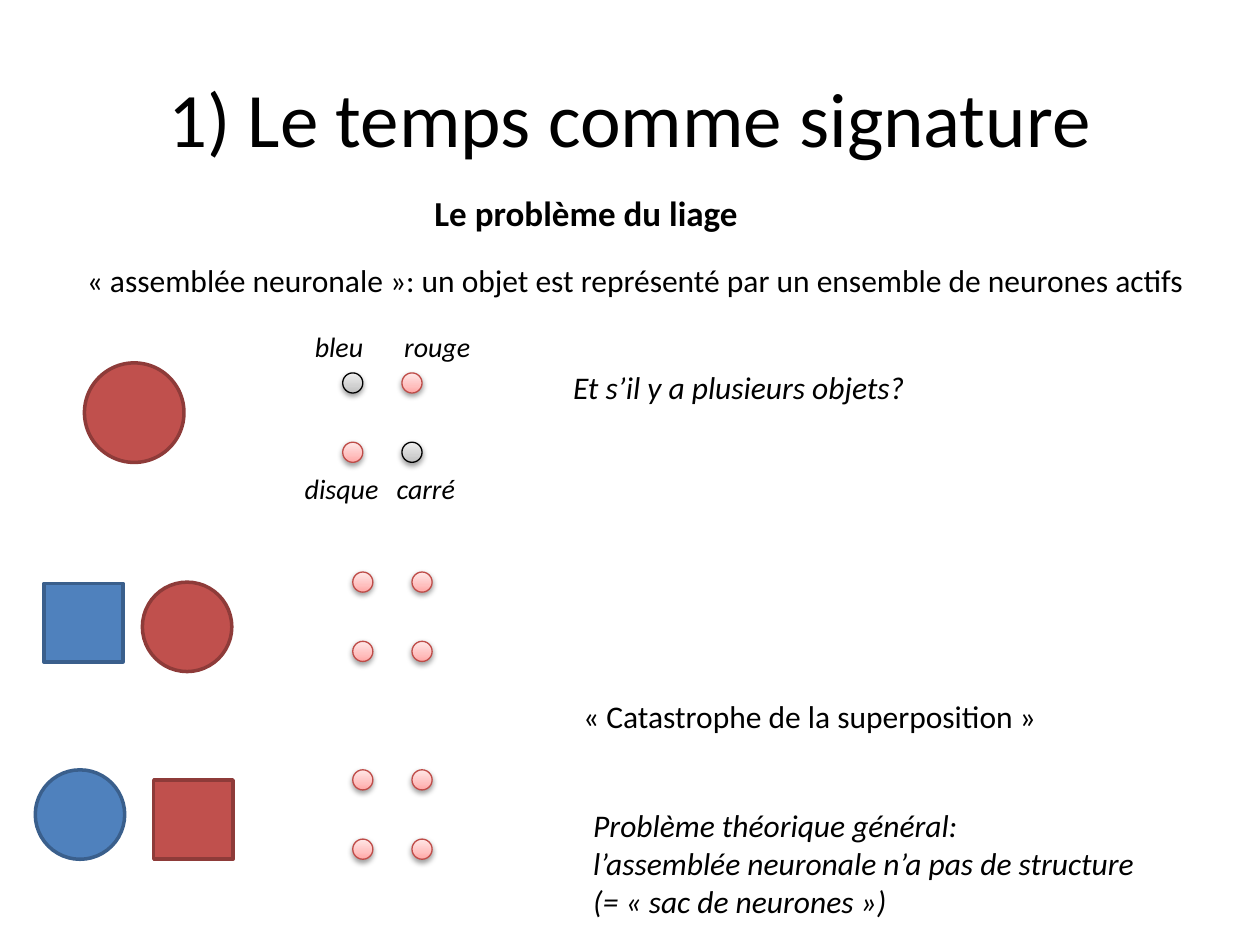
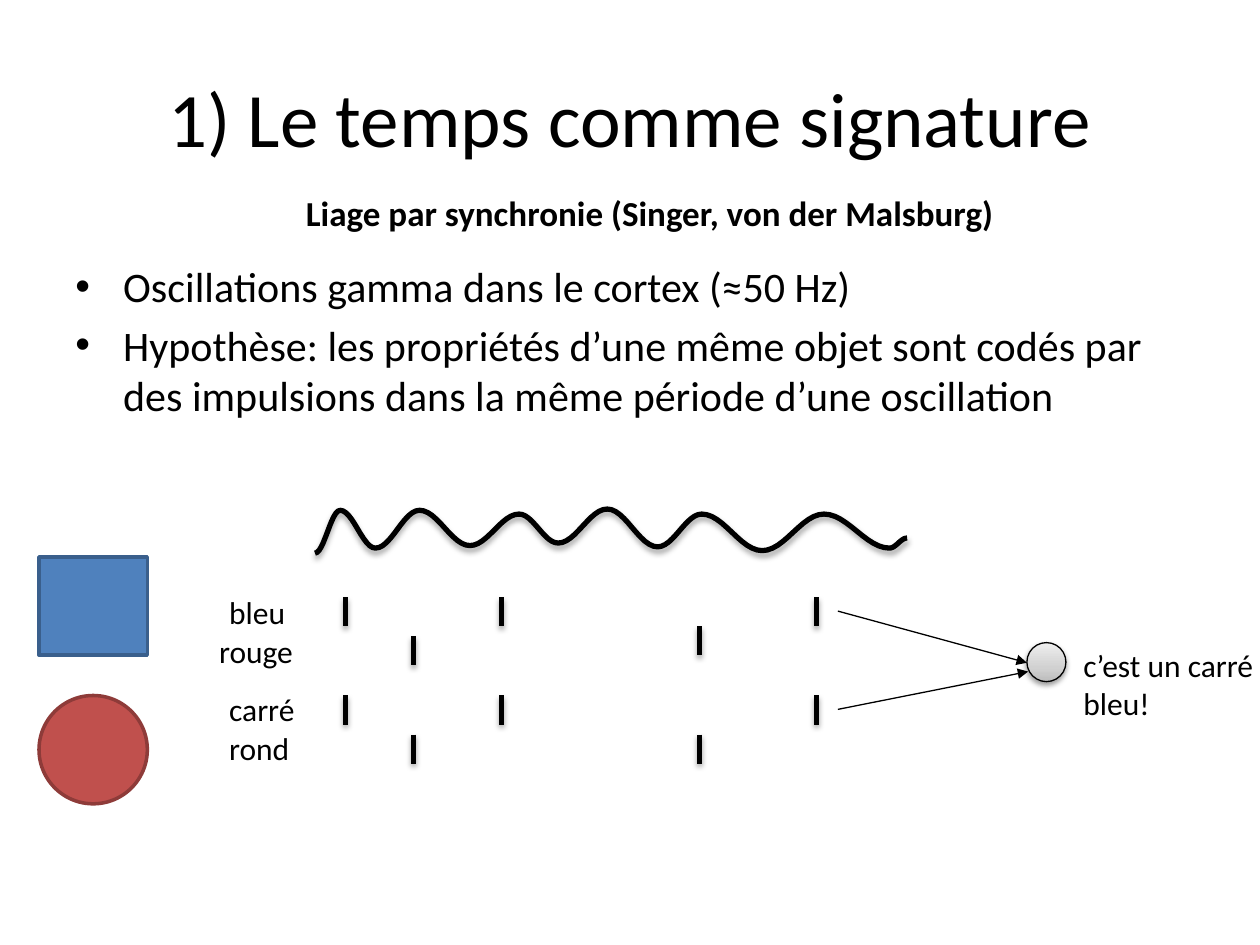
from math import cos, pi
from lxml.etree import SubElement as Sub
from pptx import Presentation
from pptx.dml.color import RGBColor as RGB
from pptx.enum.shapes import MSO_CONNECTOR as LINK, MSO_SHAPE as KIND
from pptx.enum.text import MSO_ANCHOR as ANCHOR, MSO_AUTO_SIZE as AUTO, PP_ALIGN as ALIGN
from pptx.oxml.ns import qn
from pptx.util import Inches, Pt

WIDE, HIGH = Inches(10), Inches(7.5)
UNIT = WIDE / 100  # square grid: 100 columns by 75 rows

FONT = "Calibri"
BLACK = RGB(0x00, 0x00, 0x00)
BLUE, NAVY = RGB(0x4F, 0x81, 0xBD), RGB(0x3A, 0x5F, 0x8C)
RED, WINE = RGB(0xC0, 0x50, 0x4D), RGB(0x8E, 0x3B, 0x39)
ROSE = RGB(0xBF, 0x4C, 0x48)
PINKS = RGB(0xFF, 0xA6, 0xA5), RGB(0xFF, 0xC0, 0xBF), RGB(0xFF, 0xE7, 0xE7)
GREYS = RGB(0xBD, 0xBD, 0xBD), RGB(0xD1, 0xD1, 0xD1), RGB(0xEE, 0xEE, 0xEE)
EDGE = {BLUE: NAVY, RED: WINE}
TITLE = "1) Le temps comme signature"


def grid(*cells):
    """Turn columns and rows into slide lengths."""
    return [round(c * UNIT) for c in cells]


# Shared parts

def write(slide, box, lines, size=18, bold=False, slant=False, wrap=False):
    shape = slide.shapes.add_textbox(*grid(*box))
    frame = shape.text_frame
    frame.word_wrap = wrap
    frame.auto_size = AUTO.NONE if wrap else AUTO.SHAPE_TO_FIT_TEXT
    for i, line in enumerate(lines):
        para = frame.add_paragraph() if i else frame.paragraphs[0]
        run = para.add_run()
        run.text = line
        font = run.font
        font.name, font.size = FONT, Pt(size)
        font.bold, font.italic = bold, slant
        font.color.rgb = BLACK
    return frame


def shade(part, alpha, dist):
    """Give a part a soft shadow that falls straight down."""
    props = part.element.spPr
    list_ = props.find(qn("a:effectLst"))
    if list_ is None:
        list_ = Sub(props, qn("a:effectLst"))
    drop = Sub(list_, qn("a:outerShdw"), blurRad=str(Pt(3.1)), dist=str(Pt(dist)),
               dir="5400000", rotWithShape="0")
    tint = Sub(drop, qn("a:srgbClr"), val=str(BLACK))
    Sub(tint, qn("a:alpha"), val=str(alpha * 1000))


def stroke(part, color, width):
    part.line.color.rgb = color
    part.line.width = Pt(width)


def item(slide, kind, box, color):
    """A plain disc or square, as seen by the observer."""
    shape = slide.shapes.add_shape(kind, *grid(*box))
    shape.shadow.inherit = False
    shape.fill.solid()
    shape.fill.fore_color.rgb = color
    stroke(shape, EDGE[color], 2)


def cell(slide, x, y, side, live):
    """A neuron: pink when active, grey at rest."""
    shape = slide.shapes.add_shape(KIND.OVAL, *grid(x, y, side, side))
    shape.shadow.inherit = False
    shape.fill.gradient()
    shape.fill.gradient_angle = 90
    stops = next(shape.element.spPr.iter(qn("a:gsLst")))
    for old in list(stops):
        stops.remove(old)
    for at, color in zip((0, 35, 100), PINKS if live else GREYS):
        stop = Sub(stops, qn("a:gs"), pos=str(at * 1000))
        Sub(stop, qn("a:srgbClr"), val=str(color))
    stroke(shape, ROSE if live else BLACK, 0.75)
    shade(shape, 38, 1.6)


def line(slide, start, end, width):
    link = slide.shapes.add_connector(LINK.STRAIGHT, *grid(*start, *end))
    stroke(link, BLACK, width)
    Sub(link.element.spPr, qn("a:effectLst"))
    return link


def head(slide, box, topic):
    """Title and topic line, the same on both slides."""
    frame = write(slide, (5, 3, 90, 12.5), [TITLE], 44, wrap=True)
    frame.vertical_anchor = ANCHOR.MIDDLE
    frame.paragraphs[0].alignment = ALIGN.CENTER
    write(slide, box, [topic], 20, bold=True)


# Regions of the binding problem

def quad(slide, x, y, live):
    """Two by two neurons."""
    for i, on in enumerate(live):
        cell(slide, x + i % 2 * 4.7, y + i // 2 * 5.5, 1.6, on)


def tags(slide, x, y):
    """Names around the first four neurons."""
    for name, dx, dy, w in (("bleu", 0.8, 0, 6.4), ("rouge", 7.9, 0, 7.9),
                            ("disque", 0, 11.2, 8.5), ("carré", 7.3, 11.2, 7.3)):
        write(slide, (x + dx, y + dy, w, 3.7), [name], 16, slant=True)


def binding(slide):
    head(slide, (33.5, 14.7, 26.3, 4.4), "Le problème du liage")
    write(slide, (5.9, 20.2, 90.2, 4),
          ["« assemblée neuronale »: un objet est représenté par un ensemble de neurones actifs"])

    # Objects in view
    item(slide, KIND.OVAL, (6.7, 28.8, 7.9, 7.9), RED)
    item(slide, KIND.RECTANGLE, (3.5, 46.3, 6.25, 6.25), BLUE)
    item(slide, KIND.OVAL, (11.3, 46.2, 7.1, 7.1), RED)
    item(slide, KIND.OVAL, (2.8, 61.1, 7.1, 7.1), BLUE)
    item(slide, KIND.RECTANGLE, (12.2, 61.9, 6.3, 6.3), RED)

    # Neuron states
    tags(slide, 23.2, 25.7)
    quad(slide, 27.2, 29.6, (False, True, True, False))
    for y in (45.4, 61.1):
        quad(slide, 28, y, [True] * 4)

    # Remarks
    write(slide, (44.5, 28.7, 29.3, 4), ["Et s’il y a plusieurs objets?"], slant=True)
    write(slide, (45.3, 54.8, 38.5, 4), ["« Catastrophe de la superposition »"])
    write(slide, (46.1, 63.5, 46.1, 10.1),
          ["Problème théorique général:", "l’assemblée neuronale n’a pas de structure",
           "(= « sac de neurones »)"], slant=True)


# Regions of the synchrony slide

def points(slide, box, lines):
    """Bulleted text."""
    frame = write(slide, box, lines, 24, wrap=True)
    for para in frame.paragraphs:
        para.space_before = Pt(4.5)
        props = para._p.get_or_add_pPr()
        props.set("marL", str(Inches(0.38)))
        props.set("indent", str(-Inches(0.38)))
        Sub(props, qn("a:buFont"), typeface="Arial")
        Sub(props, qn("a:buChar"), char="•")


def wave(slide, x, y):
    """Oscillation: cosine arcs between crests and troughs."""
    turns = ((0, 3.6), (2, 0.2), (4.8, 3.2), (8.3, 0.2), (12.3, 3), (16.2, 0.5),
             (19.3, 2.8), (23.2, 0.1), (27.2, 3.1), (30.7, 0.5), (35.5, 3.4),
             (40.4, 0.5), (45.6, 3.2), (47, 2.4))
    steps = 12
    dots = []
    for (x0, y0), (x1, y1) in zip(turns, turns[1:]):
        for i in range(1, steps + 1):
            part = i / steps
            dots.append(grid(x + x0 + (x1 - x0) * part,
                             y + y0 + (y1 - y0) * (1 - cos(pi * part)) / 2))
    pen = slide.shapes.build_freeform(*grid(x, y + turns[0][1]))
    pen.add_line_segments(dots, close=False)
    shape = pen.convert_to_shape()
    shape.shadow.inherit = False
    shape.fill.background()
    stroke(shape, BLACK, 3)
    shade(shape, 35, 1.8)


def spikes(slide, x, y):
    """Spike times, from the bleu row down to the rond row."""
    beat = (0, 12.4, 37.4)
    rows = ((0, beat), (7.8, beat), (3.1, (5.4,)), (2.3, (28.1,)), (10.9, (5.4, 28.1)))
    for dy, times in rows:
        for dx in times:
            tick = line(slide, (x + dx, y + dy), (x + dx, y + dy + 2.3), 3)
            shade(tick, 35, 1.8)


def readout(slide, x, y):
    """Neuron that fires when two spikes coincide."""
    cell(slide, x + 15, y + 2.5, 3.1, False)
    for start, end in (((0, 0), (15, 4.1)), ((0, 7.8), (15.1, 4.8))):
        arrow = line(slide, (x + start[0], y + start[1]), (x + end[0], y + end[1]), 0.75)
        Sub(arrow.line._get_or_add_ln(), qn("a:tailEnd"), type="triangle")
    write(slide, (x + 18.5, y + 2.3, 15.5, 7.1), ["c’est un carré bleu!"], wrap=True)


def synchrony(slide):
    head(slide, (23.3, 14.7, 57.4, 4.4), "Liage par synchronie (Singer, von der Malsburg)")
    points(slide, (5, 20.2, 90, 49.5),
           ["Oscillations gamma dans le cortex (≈50 Hz)",
            "Hypothèse: les propriétés d’une même objet sont codés par des impulsions "
            "dans la même période d’une oscillation"])

    # Objects and their features
    item(slide, KIND.RECTANGLE, (3.1, 44.2, 8.6, 7.8), BLUE)
    item(slide, KIND.OVAL, (3.1, 55.2, 8.6, 8.6), RED)
    for name, x, y, w in (("bleu", 17.2, 46.6, 6.8), ("rouge", 16.4, 49.7, 8.5),
                          ("carré", 17.2, 54.3, 7.8), ("rond", 17.2, 57.4, 7.1)):
        write(slide, (x, y, w, 4), [name])

    # Signals
    wave(slide, 25, 40.3)
    spikes(slide, 27.4, 47.4)
    readout(slide, 66.5, 48.5)


def main():
    deck = Presentation()
    deck.slide_width, deck.slide_height = WIDE, HIGH
    for build in (binding, synchrony):
        build(deck.slides.add_slide(deck.slide_layouts[6]))
    deck.save("out.pptx")


if __name__ == "__main__":
    main()
